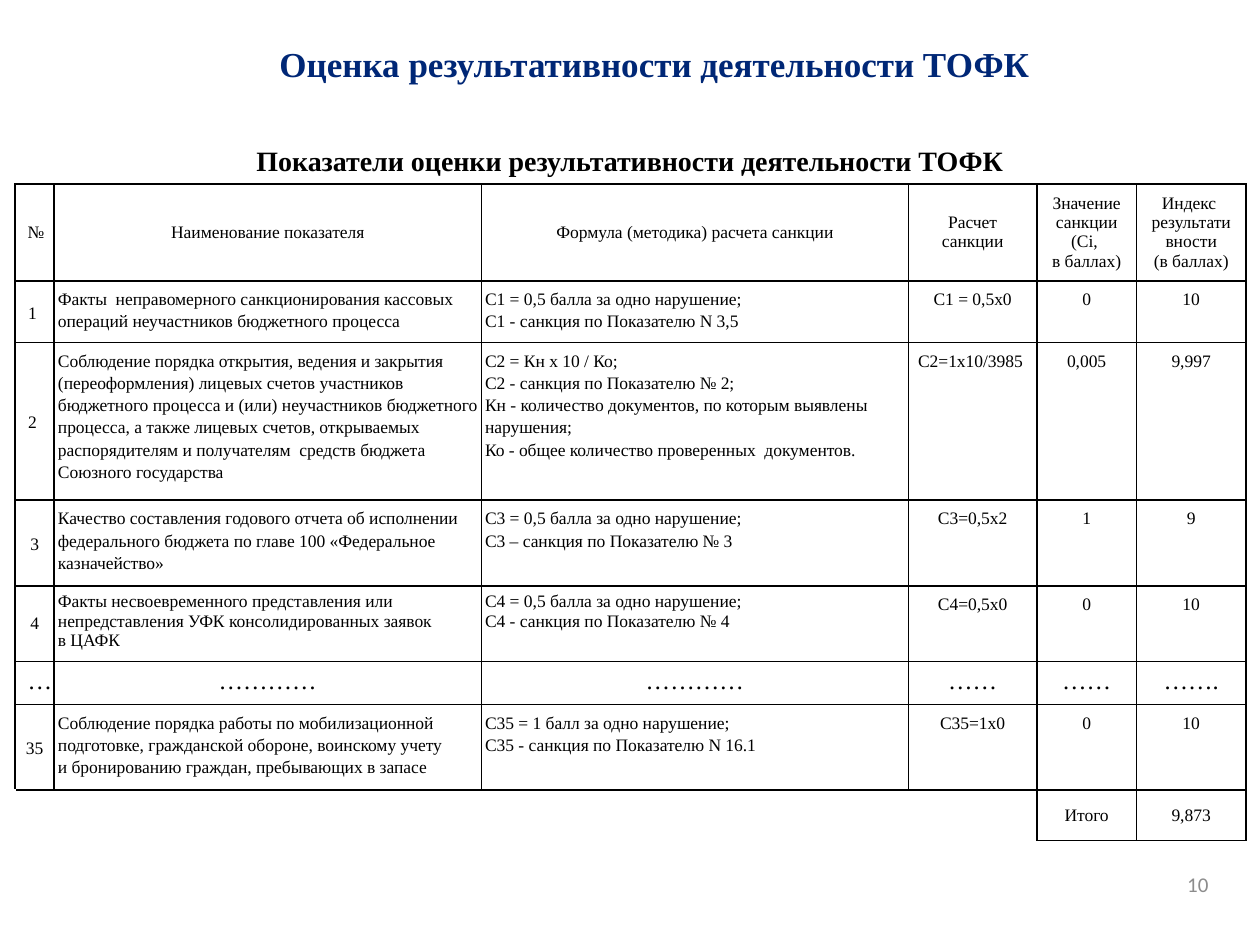
from lxml import etree
from pptx import Presentation
from pptx import util as u
from pptx.dml.color import RGBColor
from pptx.enum import text
from pptx.oxml import ns

SERIF = "Times New Roman"
BLACK = "000000"
CENTER, LEFT, RIGHT = text.PP_ALIGN.CENTER, text.PP_ALIGN.LEFT, text.PP_ALIGN.RIGHT
TOP, MIDDLE = text.MSO_ANCHOR.TOP, text.MSO_ANCHOR.MIDDLE

COLUMN_WIDTHS = [0.31, 3.39, 3.39, 1.02, 0.79, 0.87]
ROW_HEIGHTS = [0.77, 0.49, 1.25, 0.68, 0.6, 0.34, 0.68, 0.4]

# In cell text, \n starts a paragraph and \v breaks a line
HEADER = ["№", "Наименование показателя", "Формула (методика) расчета санкции",
          "Расчет санкции", "Значение санкции\n(Ci, \vв баллах)",
          "Индекс \nрезультативности\n(в баллах)"]
INDICATORS = [
    ["1 ",
     "Факты  неправомерного санкционирования кассовых операций неучастников "
     "бюджетного процесса",
     "С1 = 0,5 балла за одно нарушение;\nС1 - санкция по Показателю N 3,5",
     "С1 = 0,5х0", "0", "10"],
    ["2 ",
     "Соблюдение порядка открытия, ведения и закрытия (переоформления) лицевых "
     "счетов участников бюджетного процесса и (или) неучастников бюджетного "
     "процесса, а также лицевых счетов, открываемых распорядителям и "
     "получателям  средств бюджета Союзного государства",
     "С2 = Кн х 10 / Ко;\nС2 - санкция по Показателю № 2;\n"
     "Кн - количество документов, по которым выявлены нарушения;\n"
     "Ко - общее количество проверенных  документов.",
     "С2=1х10/3985 ", "0,005", "9,997"],
    ["3",
     "Качество составления годового отчета об исполнении федерального бюджета "
     "по главе 100 «Федеральное казначейство»",
     "С3 = 0,5 балла за одно нарушение;\nС3 – санкция по Показателю № 3",
     "С3=0,5х2", "1", "9"],
    ["4",
     "Факты несвоевременного представления или непредставления УФК "
     "консолидированных заявок \vв ЦАФК",
     "С4 = 0,5 балла за одно нарушение;\nС4 - санкция по Показателю № 4",
     "С4=0,5х0", "0", "10"],
    ["…", "…………", "…………", "……", "……", "……."],
    ["35",
     "Соблюдение порядка работы по мобилизационной подготовке, гражданской "
     "обороне, воинскому учету \vи бронированию граждан, пребывающих в запасе",
     "С35 = 1 балл за одно нарушение;\nС35 - санкция по Показателю N 16.1",
     "С35=1х0", "0", "10"],
]
TOTAL = ["", "", "", "", "Итого", "9,873"]


def color(value):
    return RGBColor.from_string(value)


def write(frame, words, size, align, font=SERIF, shade=BLACK, bold=False, spacing=None):
    frame.text = words
    frame.word_wrap = True
    for para in frame.paragraphs:
        para.alignment = align
        if spacing:
            para.line_spacing = spacing
        para.font.name = font
        para.font.size = u.Pt(size)
        para.font.bold = bold
        para.font.color.rgb = color(shade)


def add_label(page, area, words, size, align, anchor=MIDDLE, **style):
    box = page.shapes.add_textbox(*map(u.Inches, area))
    box.text_frame.vertical_anchor = anchor
    write(box.text_frame, words, size, align, **style)


def set_borders(cell, sides):
    properties = cell._tc.get_or_add_tcPr()
    for side in sides:
        line = etree.SubElement(properties, ns.qn(f"a:ln{side}"), w=str(u.Pt(1)))
        fill = etree.SubElement(line, ns.qn("a:solidFill"))
        etree.SubElement(fill, ns.qn("a:srgbClr"), val=BLACK)


def fill_cell(cell, words, row, column):
    is_indicator = row in (1, 2, 3, 4, 6)
    is_ellipsis = row == 5
    is_description = column in (1, 2)

    cell.margin_left = cell.margin_right = u.Inches(0.03 if is_indicator else 0.1)
    cell.margin_top = cell.margin_bottom = u.Inches(0.05)
    at_top = is_ellipsis or (is_indicator and column > 0)
    cell.vertical_anchor = TOP if at_top else MIDDLE

    # Indicator 4 keeps single spacing in its first three columns
    is_loose = is_indicator and not (row == 4 and column < 3)
    write(cell.text_frame, words, 14 if is_ellipsis else 10,
          LEFT if is_indicator and is_description else CENTER,
          spacing=1.15 if is_loose else None)


def add_indicator_table(page, area):
    rows = [HEADER, *INDICATORS, TOTAL]
    table = page.shapes.add_table(len(rows), len(HEADER), *map(u.Inches, area)).table
    table.first_row = table.horz_banding = False
    for column, width in zip(table.columns, COLUMN_WIDTHS):
        column.width = u.Inches(width)
    for row, height in zip(table.rows, ROW_HEIGHTS):
        row.height = u.Inches(height)

    last = len(rows) - 1
    table.cell(last, 0).merge(table.cell(last, 3))
    for r, row in enumerate(rows):
        for c, words in enumerate(row):
            cell = table.cell(r, c)
            # The merged corner is open on the left and below
            is_corner = r == last and c < 4
            set_borders(cell, "RT" if is_corner else "LRTB")
            cell.fill.background()
            fill_cell(cell, words, r, c)


def build_page(deck):
    page = deck.slides.add_slide(deck.slide_layouts[6])
    # Headings
    add_label(page, (1.22, 0.29, 7.95, 0.44), "Оценка результативности деятельности ТОФК",
              20, CENTER, TOP, shade="002776", bold=True)
    add_label(page, (0, 1.09, 10, 0.37),
              "Показатели оценки результативности деятельности ТОФК",
              16, CENTER, bold=True)
    # Indicators
    add_indicator_table(page, (0.12, 1.46, sum(COLUMN_WIDTHS), sum(ROW_HEIGHTS)))
    # Page number
    add_label(page, (7.36, 6.82, 2.33, 0.4), "10", 12, RIGHT,
              font="Calibri", shade="8C8C8C")


def main():
    deck = Presentation()
    deck.slide_width, deck.slide_height = u.Inches(10), u.Inches(7.5)
    build_page(deck)
    deck.save("out.pptx")


if __name__ == "__main__":
    main()
